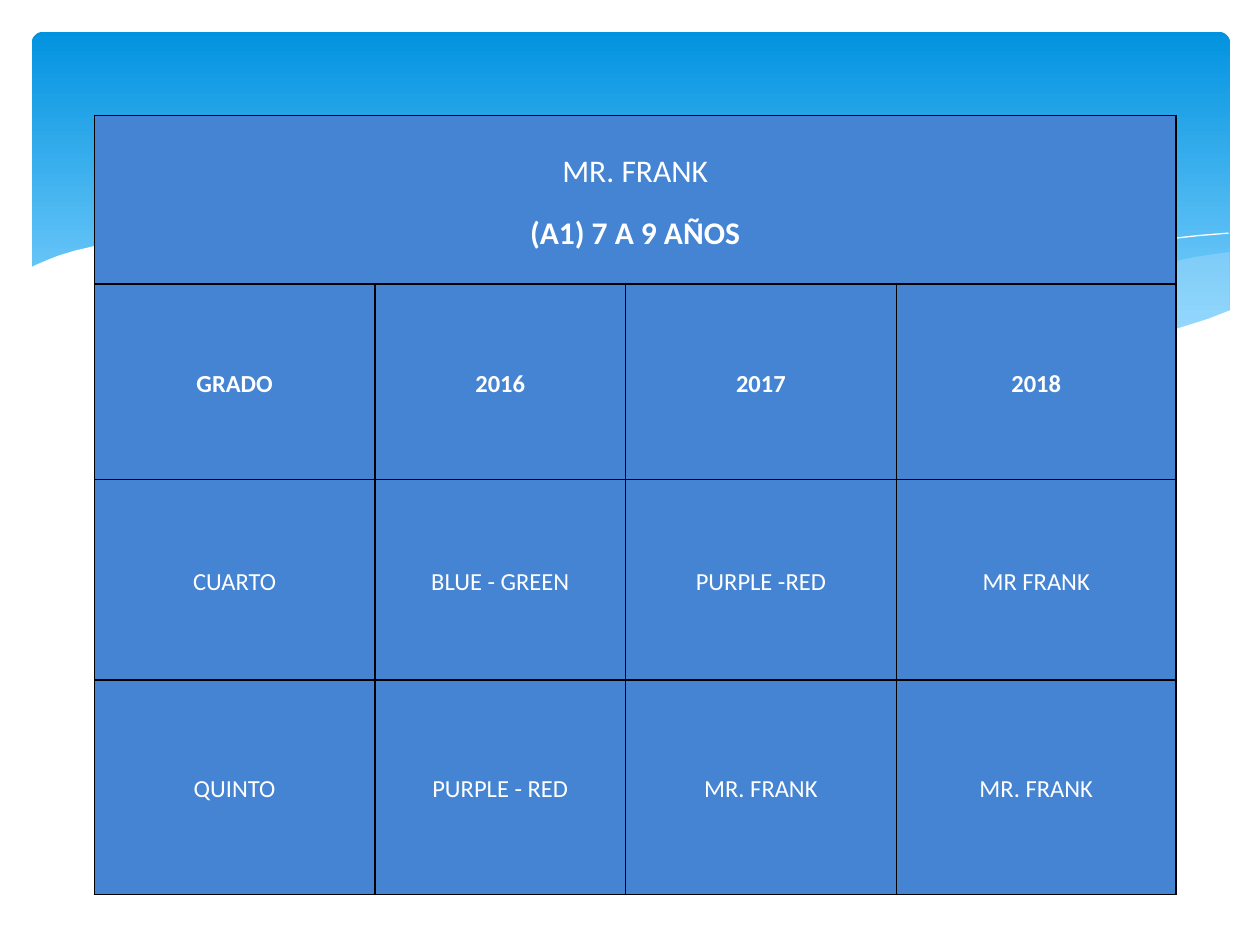
"""Build a slide with a wave banner and a timetable of grades by year."""
from dataclasses import dataclass

from lxml.etree import SubElement
from pptx import Presentation
from pptx.dml.color import RGBColor as Rgb
from pptx.enum.shapes import MSO_SHAPE as Shape
from pptx.enum.text import MSO_ANCHOR as Anchor, PP_ALIGN as Align
from pptx.oxml.ns import qn
from pptx.util import Cm, Pt


@dataclass(frozen=True)
class Theme:
    font: str = "Calibri"
    heading: int = 18
    body: int = 14
    white: Rgb = Rgb(0xFF, 0xFF, 0xFF)
    border: Rgb = Rgb(0, 0, 0)
    cell: Rgb = Rgb(0x45, 0x84, 0xD3)
    banner_top: Rgb = Rgb(0x02, 0x93, 0xE0)
    banner_end: Rgb = Rgb(0x83, 0xD3, 0xFE)
    wave: Rgb = Rgb(0xC6, 0xE7, 0xFC)


def add_curve(page, points, fill=None, opacity=100):
    builder = page.shapes.build_freeform(*points[0], scale=Cm(0.0254))
    builder.add_line_segments(points[1:], close=fill is not None)
    curve = builder.convert_to_shape()
    curve.shadow.inherit = False
    if fill is None:
        curve.fill.background()
        curve.line.color.rgb = theme.white
        curve.line.width = Pt(0)
        return
    curve.line.fill.background()
    curve.fill.solid()
    curve.fill.fore_color.rgb = fill
    if opacity < 100:
        color = next(curve.fill._xPr.iter(qn("a:srgbClr")))
        SubElement(color, qn("a:alpha"), val=str(opacity * 1000))


def add_borders(cell):
    properties = cell._tc.get_or_add_tcPr()
    for side in ("lnL", "lnR", "lnT", "lnB"):
        edge = SubElement(properties, qn(f"a:{side}"), w=str(Pt(1)))
        fill = SubElement(edge, qn("a:solidFill"))
        SubElement(fill, qn("a:srgbClr"), val=str(theme.border))


theme = Theme()
deck = Presentation()
deck.slide_width, deck.slide_height = Cm(25.4), Cm(19.05)
page = deck.slides.add_slide(deck.slide_layouts[6])

banner = page.shapes.add_shape(
    Shape.ROUNDED_RECTANGLE, Cm(0.64), Cm(0.64), Cm(24.16), Cm(6.86))
banner.adjustments[0] = 0.034
banner.shadow.inherit = False
banner.line.fill.background()
banner.fill.gradient()
banner.fill.gradient_angle = 270
stops = zip(banner.fill.gradient_stops, (0, 0.9), (theme.banner_top, theme.banner_end))
for stop, position, color in stops:
    stop.position = position
    stop.color.rgb = color

right_wave = [
    (975, 200), (948, 204), (921, 210), (891, 216), (861, 223), (805, 237),
    (753, 248), (706, 257), (661, 265), (691, 269), (719, 272), (745, 275),
    (769, 277), (792, 277), (814, 278), (835, 277), (854, 276), (872, 274),
    (889, 272), (905, 269), (921, 265), (935, 262), (949, 257), (963, 252),
    (976, 247), (976, 200)]
middle_wave = [
    (893, 273), (866, 269), (837, 265), (807, 260), (775, 254), (741, 247),
    (706, 240), (668, 231), (629, 222), (598, 214), (569, 208), (541, 203),
    (514, 198), (489, 194), (465, 191), (442, 189), (420, 187), (399, 186),
    (380, 185), (361, 185), (344, 186), (313, 188), (286, 191), (323, 196),
    (362, 203), (404, 211), (449, 222), (491, 232), (530, 240), (566, 248),
    (601, 255), (634, 261), (665, 266), (695, 270), (722, 274), (748, 276),
    (773, 277), (796, 278), (828, 278), (857, 277), (876, 275)]
long_line = [
    (309, 195), (328, 192), (353, 189), (387, 187), (416, 187), (450, 188),
    (489, 190), (533, 194), (582, 200), (636, 208), (695, 219), (760, 233),
    (831, 251), (869, 261), (907, 272)]
right_line = [
    (613, 257), (653, 246), (695, 235), (748, 223), (806, 210), (866, 199),
    (895, 194), (924, 190), (951, 187), (975, 185)]
white_wave = [
    (977, 246), (959, 253), (940, 259), (920, 265), (899, 269), (875, 273),
    (850, 275), (823, 277), (793, 276), (761, 275), (726, 272), (688, 268),
    (648, 262), (603, 254), (555, 245), (503, 233), (447, 220), (418, 213),
    (391, 207), (365, 202), (340, 197), (316, 194), (292, 190), (271, 188),
    (250, 186), (230, 185), (211, 184), (177, 184), (146, 185), (119, 187),
    (95, 191), (76, 195), (59, 199), (46, 203), (36, 207), (29, 210),
    (23, 213), (23, 329), (977, 329)]
add_curve(page, right_wave, theme.wave, 29)
add_curve(page, middle_wave, theme.wave, 40)
add_curve(page, long_line)
add_curve(page, right_line)
add_curve(page, white_wave, theme.white)

rows = [
    ["MR. FRANK\n(A1) 7 A 9 AÑOS", "", "", ""],
    ["GRADO", "2016", "2017", "2018"],
    ["CUARTO", "BLUE - GREEN", "PURPLE -RED", "MR FRANK"],
    ["QUINTO", "PURPLE - RED", "MR. FRANK", "MR. FRANK"],
]
widths = (5.66, 5.05, 5.46, 5.64)
heights = (3.4, 3.94, 4.04, 4.32)
table = page.shapes.add_table(
    len(rows), len(widths), Cm(1.9), Cm(2.33), Cm(sum(widths)), Cm(sum(heights))).table
for column, width in zip(table.columns, widths):
    column.width = Cm(width)
for row, height in zip(table.rows, heights):
    row.height = Cm(height)
table.cell(0, 0).merge(table.cell(0, len(widths) - 1))

for row_index, texts in enumerate(rows):
    for column_index, text in enumerate(texts):
        cell = table.cell(row_index, column_index)
        add_borders(cell)
        cell.fill.solid()
        cell.fill.fore_color.rgb = theme.cell
        if cell.is_spanned:
            continue
        cell.vertical_anchor = Anchor.MIDDLE
        cell.margin_left = cell.margin_right = Cm(0.18)
        cell.margin_top = cell.margin_bottom = Cm(0)
        frame = cell.text_frame
        for line_index, line in enumerate(text.split("\n")):
            para = frame.add_paragraph() if line_index else frame.paragraphs[0]
            para.alignment = Align.CENTER
            para.line_spacing = 1.15
            para.space_after = Pt(10 if row_index < 2 or column_index == 0 else 0)
            span = para.add_run()
            span.text = line
            span.font.name = theme.font
            span.font.size = Pt(theme.body if row_index else theme.heading)
            span.font.bold = row_index == 1 or line_index == 1
            span.font.color.rgb = theme.white

deck.save("out.pptx")
